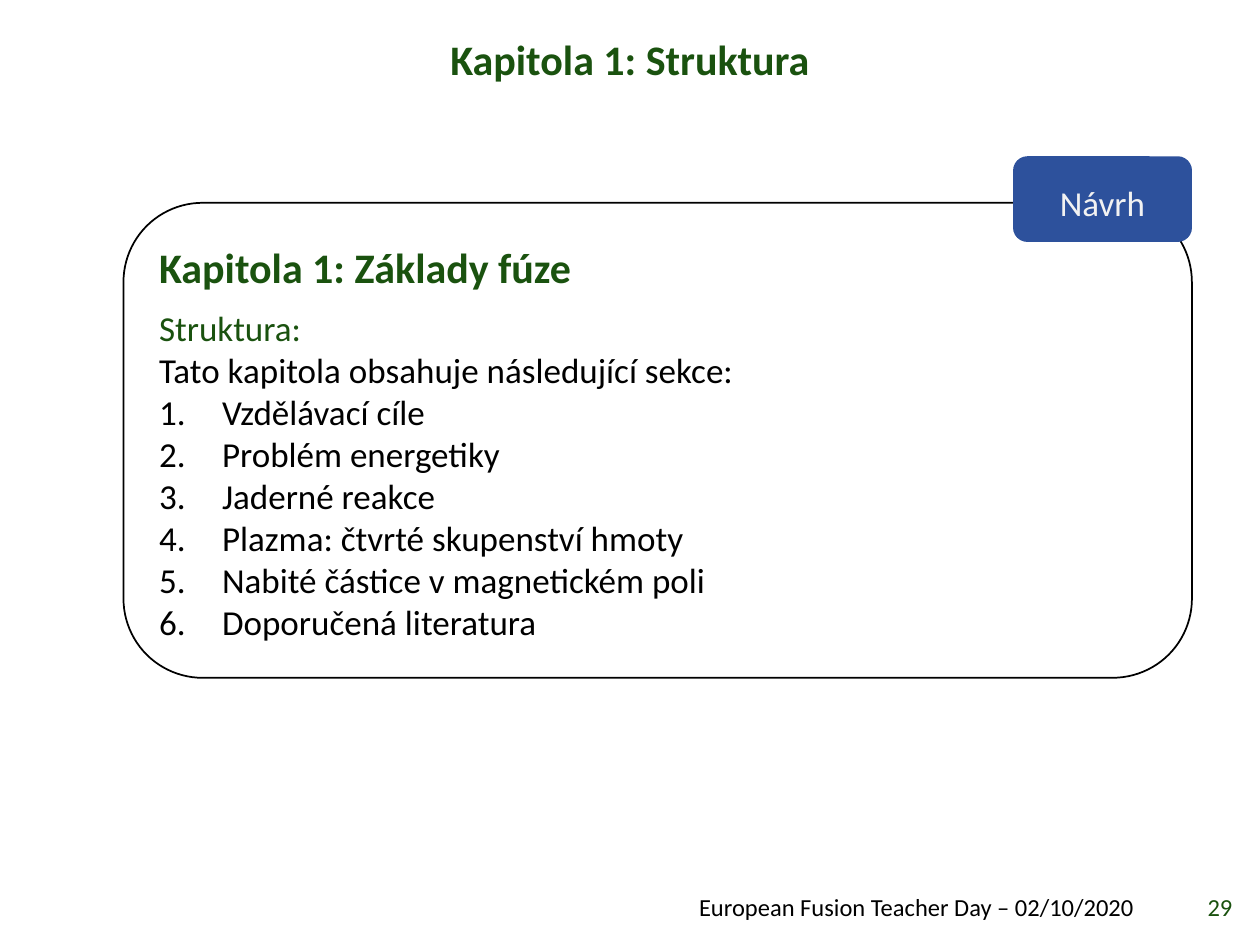
from lxml.etree import SubElement
from pptx import Presentation
from pptx.dml.color import RGBColor
from pptx.enum.shapes import MSO_SHAPE
from pptx.enum.text import MSO_ANCHOR, PP_ALIGN
from pptx.oxml.ns import qn
from pptx.util import Pt

GREEN, BLACK, WHITE = "1A520F", "000000", "FFFFFF"
BLUE, PALE = "2D519C", "F2F2F2"

HEADING = {"size": Pt(24), "bold": True, "color": GREEN}
BODY = {"size": Pt(20), "color": BLACK}
FOOTER = {"size": Pt(14), "color": BLACK}

# left, top, width, height in points
TITLE_AT = (0, 18.72, 720, 33.84)
FOOTER_AT = (105.12, 506.16, 550.08, 24.48)
NUMBER_AT = (663.84, 506.16, 47.52, 24.48)
CARD_AT = (70.56, 115.92, 610.56, 271.44)
BADGE_AT = (578.88, 89.28, 102.24, 48.96)
BADGE_LABEL_AT = (578.88, 98.64, 102.24, 34.56)
NUMBER_TAB = Pt(36)

LABELS = [
    (NUMBER_AT, "29", FOOTER | {"color": GREEN}, {"alignment": PP_ALIGN.RIGHT}),
    (TITLE_AT, "Kapitola 1: Struktura", HEADING,
     {"alignment": PP_ALIGN.CENTER, "line_spacing": 0.9}),
    (FOOTER_AT, "European Fusion Teacher Day – 02/10/2020", FOOTER,
     {"alignment": PP_ALIGN.RIGHT}),
]
INTRO = [
    ("Kapitola 1: Základy fúze", HEADING, {"line_spacing": 1.07, "space_after": Pt(8)}),
    ("Struktura:", BODY | {"color": GREEN}, {}),
    ("Tato kapitola obsahuje následující sekce:", BODY, {}),
]
SECTIONS = [
    "Vzdělávací cíle",
    "Problém energetiky",
    "Jaderné reakce",
    "Plazma: čtvrté skupenství hmoty",
    "Nabité částice v magnetickém poli",
    "Doporučená literatura",
]


def rgb(value):
    return RGBColor.from_string(value)


def write(paragraph, text, font_format, layout):
    for name, value in ({"alignment": PP_ALIGN.LEFT} | layout).items():
        setattr(paragraph, name, value)
    run = paragraph.add_run()
    run.text = text
    for name, value in ({"name": "Calibri"} | font_format).items():
        if name == "color":
            run.font.color.rgb = rgb(value)
        else:
            setattr(run.font, name, value)


def add_tab_stop(paragraph, position):
    tabs = SubElement(paragraph._p.get_or_add_pPr(), qn("a:tabLst"))
    SubElement(tabs, qn("a:tab"), pos=str(position), algn="l")


def prepare_frame(holder):
    frame = holder.text_frame
    frame.word_wrap = True
    frame.vertical_anchor = MSO_ANCHOR.MIDDLE
    return frame


def add_rounded(slide, at, fill, line=None):
    panel = slide.shapes.add_shape(MSO_SHAPE.ROUNDED_RECTANGLE, *map(Pt, at))
    panel.shadow.inherit = False
    panel.fill.solid()
    panel.fill.fore_color.rgb = rgb(fill)
    if line:
        panel.line.color.rgb = rgb(line)
        panel.line.width = Pt(1)
    else:
        panel.line.fill.background()
    return prepare_frame(panel)


def main():
    deck = Presentation()
    deck.slide_width, deck.slide_height = Pt(720), Pt(540)
    slide = deck.slides.add_slide(deck.slide_layouts[6])

    for at, text, font_format, layout in LABELS:
        frame = prepare_frame(slide.shapes.add_textbox(*map(Pt, at)))
        write(frame.paragraphs[0], text, font_format, layout)

    card = add_rounded(slide, CARD_AT, WHITE, BLACK)
    for index, (text, font_format, layout) in enumerate(INTRO):
        paragraph = card.add_paragraph() if index else card.paragraphs[0]
        write(paragraph, text, font_format, layout)
    for number, section in enumerate(SECTIONS, 1):
        paragraph = card.add_paragraph()
        add_tab_stop(paragraph, NUMBER_TAB)
        write(paragraph, f"{number}.\t{section}", BODY, {})

    add_rounded(slide, BADGE_AT, BLUE)
    badge_label = add_rounded(slide, BADGE_LABEL_AT, BLUE)
    write(badge_label.paragraphs[0], "Návrh", BODY | {"color": PALE},
          {"alignment": PP_ALIGN.CENTER})

    deck.save("out.pptx")


if __name__ == "__main__":
    main()
